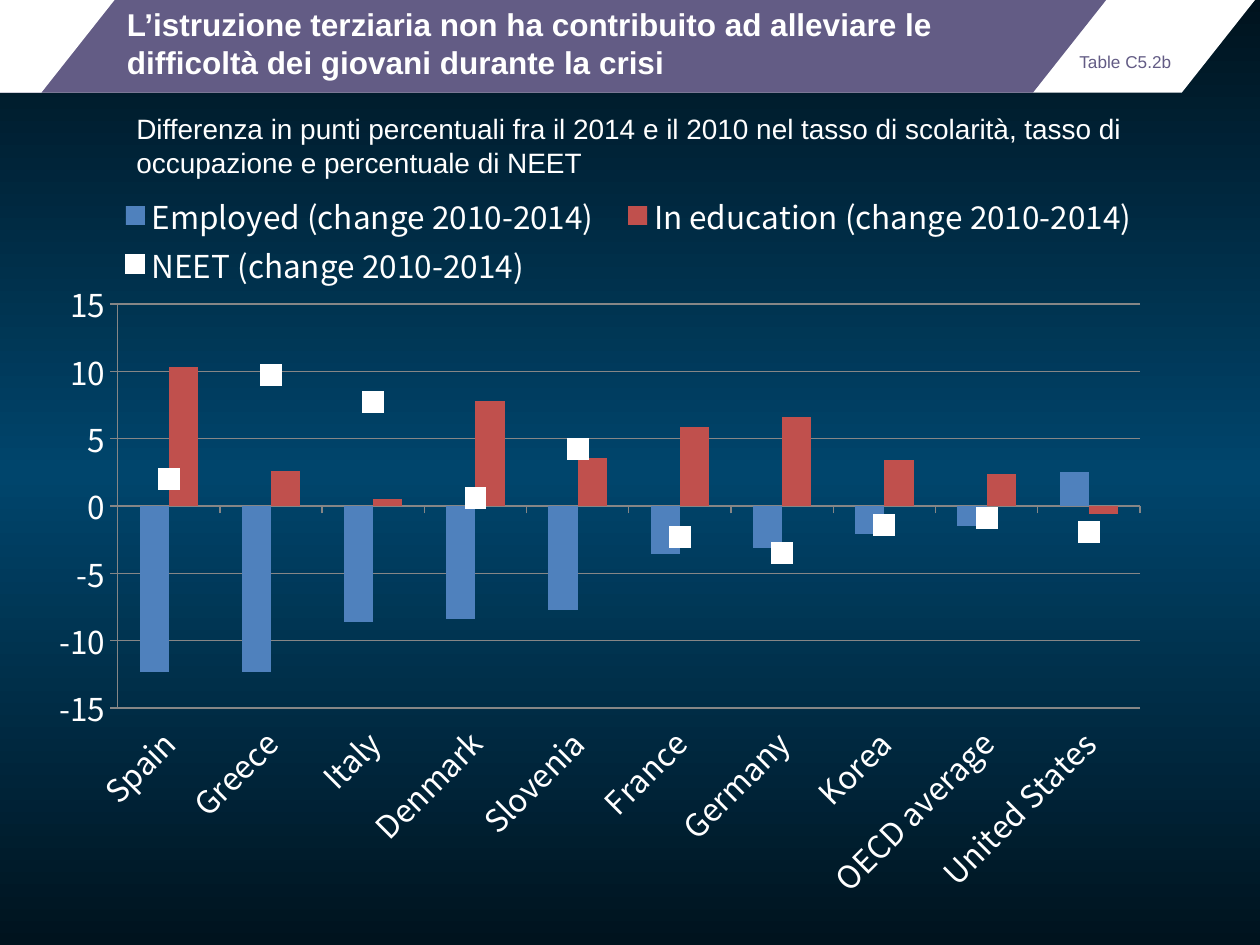
from dataclasses import dataclass

from lxml import etree
from copy import deepcopy
from pptx import Presentation
from pptx import util as u
from pptx.chart.data import CategoryChartData
from pptx.dml.color import RGBColor
from pptx.enum import chart as charts, shapes, text
from pptx.oxml import parse_xml
from pptx.oxml.ns import nsdecls, qn


@dataclass(frozen=True)
class Theme:
    white: RGBColor = RGBColor(0xFF, 0xFF, 0xFF)
    purple: RGBColor = RGBColor(0x63, 0x5C, 0x85)
    night: RGBColor = RGBColor(0x00, 0x13, 0x1E)
    sea: RGBColor = RGBColor(0x00, 0x45, 0x6C)
    blue: RGBColor = RGBColor(0x4F, 0x81, 0xBD)
    red: RGBColor = RGBColor(0xC0, 0x50, 0x4D)
    grey: RGBColor = RGBColor(0x86, 0x86, 0x86)
    text_font: str = "Arial"
    chart_font: str = "Noto Sans CJK KR"
    title_size: float = 18
    subtitle_size: float = 16
    source_size: float = 9.8
    chart_size: float = 18


theme = Theme()


def add_text(page, place, words, size, color, bold=False, anchor=text.MSO_ANCHOR.TOP):
    box = page.shapes.add_textbox(*(u.Cm(length) for length in place))
    frame = box.text_frame
    frame.word_wrap = True
    frame.vertical_anchor = anchor
    para = frame.paragraphs[0]
    para.text = words
    para.font.name, para.font.size, para.font.bold = theme.text_font, u.Pt(size), bold
    para.font.color.rgb = color


def make_layout(x, y, w, h, inner=False):
    """Chart layout in fractions of the chart's width and height."""
    layout = parse_xml(f'<c:layout {nsdecls("c")}><c:manualLayout/></c:layout>')
    settings = [("layoutTarget", "inner")] if inner else []
    settings += [("xMode", "edge"), ("yMode", "edge"), ("x", x), ("y", y), ("w", w), ("h", h)]
    for tag, value in settings:
        etree.SubElement(layout[0], qn(f"c:{tag}")).set("val", str(value))
    return layout


deck = Presentation()
deck.slide_width, deck.slide_height = u.Cm(25.4), u.Cm(19.05)
page = deck.slides.add_slide(deck.slide_layouts[6])

# Background: dark at both ends, lighter in the middle
fill = page.background.fill
fill.gradient()
fill.gradient_angle = 270
stop_list = page.element.find(".//" + qn("a:gsLst"))
stop_list.insert(1, deepcopy(stop_list[0]))
for stop, position, color in zip(
    fill.gradient_stops, (0, 0.5, 1), (theme.night, theme.sea, theme.night)
):
    stop.position = position
    stop.color.rgb = color

# Header band of overlapping parallelograms
for left, width, color in (
    (-0.51, 25.81, theme.white),
    (-1.5, 23.8, theme.purple),
    (-1.47, 3.78, theme.white),
):
    band = page.shapes.add_shape(
        shapes.MSO_SHAPE.PARALLELOGRAM, u.Cm(left), 0, u.Cm(width), u.Cm(1.87)
    )
    band.adjustments[0] = 0.79
    band.shadow.inherit = False
    band.fill.solid()
    band.fill.fore_color.rgb = color
    band.line.fill.background()

# Chart data
data = CategoryChartData()
data.categories = [
    "Spain", "Greece", "Italy", "Denmark", "Slovenia",
    "France", "Germany", "Korea", "OECD average", "United States",
]
for name, values in (
    ("Employed", (-12.3, -12.3, -8.6, -8.4, -7.7, -3.6, -3.1, -2.1, -1.5, 2.5)),
    ("In education", (10.3, 2.6, 0.5, 7.8, 3.6, 5.9, 6.6, 3.4, 2.4, -0.6)),
    ("NEET", (2, 9.7, 7.7, 0.6, 4.2, -2.3, -3.5, -1.4, -0.9, -1.9)),
):
    data.add_series(f"{name} (change 2010-2014)", values)

chart = page.shapes.add_chart(
    charts.XL_CHART_TYPE.COLUMN_CLUSTERED,
    u.Cm(0.7), u.Cm(2.73), u.Cm(22.6), u.Cm(15.6), data,
).chart
chart.has_title = False
chart.font.name, chart.font.size = theme.chart_font, u.Pt(theme.chart_size)
chart.font.color.rgb = theme.white

# Columns
columns = chart.plots[0]
columns.vary_by_categories = False
columns.gap_width, columns.overlap = 150, 0
for series, color in zip(columns.series, (theme.blue, theme.red)):
    series.invert_if_negative = False
    series.format.fill.solid()
    series.format.fill.fore_color.rgb = color

# The NEET series moves to a line plot on the same axes
bar_plot = chart.element.find(".//" + qn("c:barChart"))
neet_series = bar_plot.findall(qn("c:ser"))[2]
for inverted in neet_series.findall(qn("c:invertIfNegative")):
    neet_series.remove(inverted)
line_plot = parse_xml(
    f'<c:lineChart {nsdecls("c")}><c:grouping val="standard"/>'
    '<c:varyColors val="0"/><c:marker val="1"/></c:lineChart>'
)
line_plot.insert(2, neet_series)
for axis_id in bar_plot.findall(qn("c:axId")):
    line_plot.append(deepcopy(axis_id))
bar_plot.addnext(line_plot)

# NEET shows as white squares without a line
neet = chart.plots[1].series[0]
neet.smooth = False
neet.format.line.fill.background()
neet.marker.style, neet.marker.size = charts.XL_MARKER_STYLE.SQUARE, 12
neet.marker.format.fill.solid()
neet.marker.format.fill.fore_color.rgb = theme.white
neet.marker.format.line.fill.background()

# Axes and gridlines
countries, points = chart.category_axis, chart.value_axis
points.minimum_scale, points.maximum_scale, points.major_unit = -15, 15, 5
points.has_major_gridlines = True
points.tick_labels.number_format = "General"
points.tick_labels.number_format_is_linked = False
countries.tick_label_position = charts.XL_TICK_LABEL_POSITION.LOW
for axis in (countries, points):
    axis.major_tick_mark = charts.XL_TICK_MARK.OUTSIDE
for part in (countries, points, points.major_gridlines):
    part.format.line.color.rgb = theme.grey
    part.format.line.width = u.Pt(0.75)
countries.tick_labels.font.size = u.Pt(theme.chart_size)
countries.tick_labels.font.color.rgb = theme.white
chart.element.find(".//" + qn("c:catAx")).find(".//" + qn("a:bodyPr")).set("rot", "-2700000")

# Fixed inner plot area
plot_area = chart.element.find(".//" + qn("c:plotArea"))
for layout in plot_area.findall(qn("c:layout")):
    plot_area.remove(layout)
plot_area.insert(0, make_layout(0.074, 0.218, 0.912, 0.522, inner=True))

# Legend in two rows between subtitle and plot
chart.has_legend = True
chart.legend.position = charts.XL_LEGEND_POSITION.TOP
chart.legend.include_in_layout = False
legend = chart.element.find(".//" + qn("c:legend"))
for layout in legend.findall(qn("c:layout")):
    legend.remove(layout)
legend.find(qn("c:legendPos")).addnext(make_layout(0.06, 0.07, 0.94, 0.13))

# Title, table reference and subtitle
add_text(
    page, (2.31, 0, 18.21, 1.73),
    "L’istruzione terziaria non ha contribuito ad alleviare le difficoltà dei giovani durante la crisi",
    theme.title_size, theme.white, bold=True, anchor=text.MSO_ANCHOR.MIDDLE,
)
add_text(page, (21.51, 0.92, 2.59, 0.94), "Table C5.2b", theme.source_size, theme.purple)
add_text(
    page, (2.5, 2.13, 21.4, 1.6),
    "Differenza in punti percentuali fra il 2014 e il 2010 nel tasso di scolarità, "
    "tasso di occupazione e percentuale di NEET",
    theme.subtitle_size, theme.white,
)

deck.save("out.pptx")
